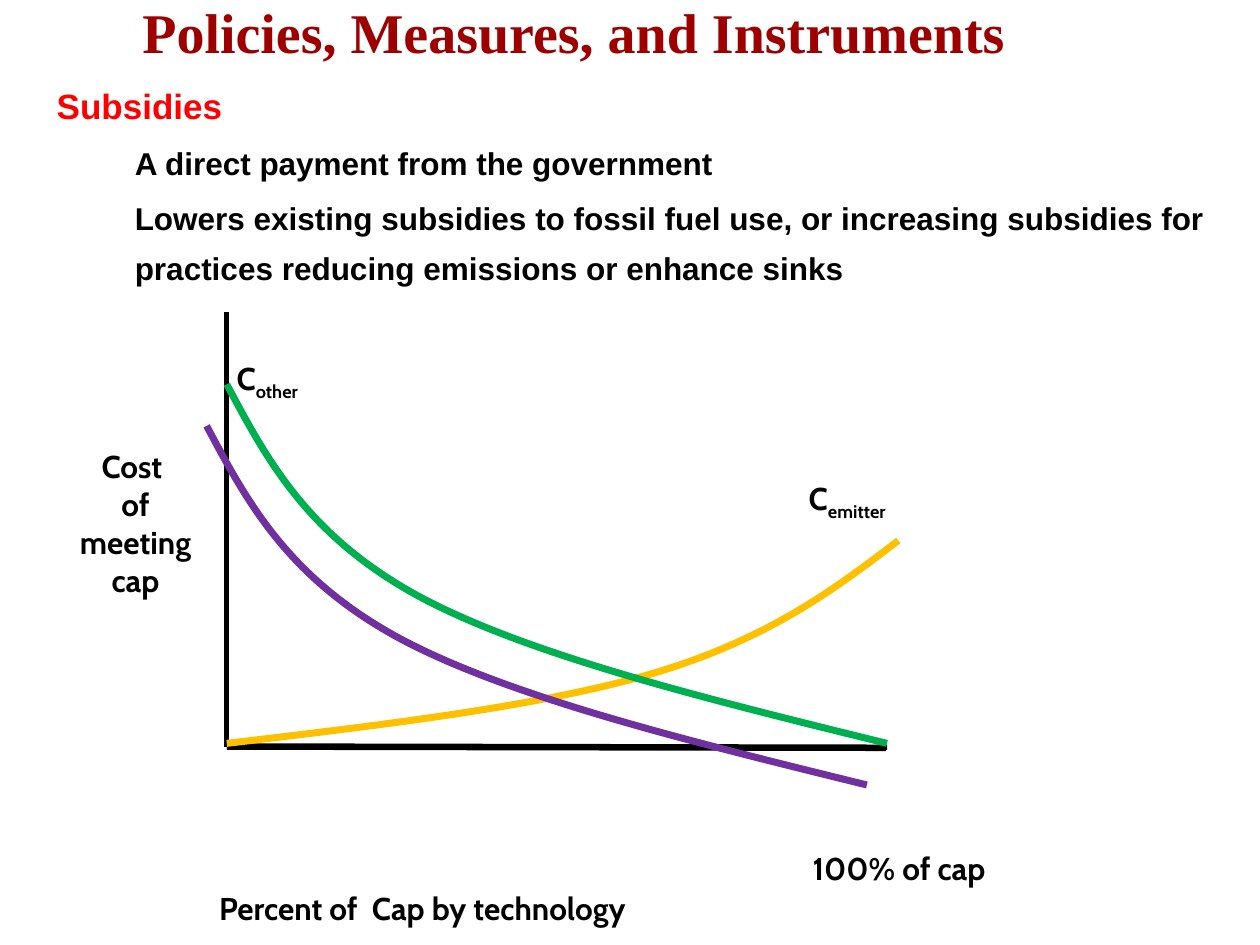
from lxml import etree
from pptx import Presentation
from pptx.dml.color import RGBColor
from pptx.enum.shapes import MSO_CONNECTOR
from pptx.enum.text import MSO_ANCHOR, MSO_AUTO_SIZE, PP_ALIGN
from pptx.oxml.ns import qn
from pptx.util import Inches, Pt

STRAIGHT = MSO_CONNECTOR.STRAIGHT
TOP = MSO_ANCHOR.TOP
FIXED = MSO_AUTO_SIZE.NONE
LEFT, MID = PP_ALIGN.LEFT, PP_ALIGN.CENTER

THEME = {
    "title": ("Times New Roman", 32, "9E0000"),
    "head": ("Arial", 20, "FF0000"),
    "item": ("Arial", 18, "000000"),
    "label": ("Cabin", 18, "000000"),
    "axis": ("000000", 3),
    "emitter": ("FFC000", 4),
    "other": ("00B050", 4),
    "subsidy": ("7030A0", 4),
}

prs = Presentation()
prs.slide_width, prs.slide_height = Inches(10), Inches(7.5)
COL, ROW = prs.slide_width / 100, prs.slide_height / 75  # square grid cells
slide = prs.slides.add_slide(prs.slide_layouts[1])
shapes = slide.shapes


def grid(*nums):
    """Turn column, row pairs into slide lengths."""
    return [round(n * (ROW if i % 2 else COL)) for i, n in enumerate(nums)]


def style(part, name):
    """Give a paragraph its font, or a line its colour and width."""
    if len(THEME[name]) == 3:
        font = part.font
        font.name, size, tint = THEME[name]
        font.size, font.bold = Pt(size), True
        font.color.rgb = RGBColor.from_string(tint)
    else:
        tint, width = THEME[name]
        part.color.rgb = RGBColor.from_string(tint)
        part.width = Pt(width)


# Title and body placeholders
title, body = shapes.title, slide.placeholders[1]
for holder, box in ((title, (10.3, -0.7, 95, 6.4)), (body, (1.6, 5.2, 95.8, 63.6))):
    holder.left, holder.top, holder.width, holder.height = grid(*box)
    frame = holder.text_frame
    frame.word_wrap, frame.auto_size, frame.vertical_anchor = True, FIXED, TOP

title.text_frame.text = "Policies, Measures, and Instruments"
para = title.text_frame.paragraphs[0]
para.alignment = LEFT
style(para, "title")

items = [
    ("Subsidies", "head", 1, 1.9),
    ("A direct payment from the government", "item", 2, 8.1),
    ("Lowers existing subsidies to fossil fuel use, or increasing subsidies for "
     "practices reducing emissions or enhance sinks", "item", 2, 8.1),
]
body.text_frame.text = "\n".join(item[0] for item in items)
for para, (_, name, level, indent) in zip(body.text_frame.paragraphs, items):
    style(para, name)
    para.level, para.line_spacing = level, 1.3
    para.space_before = Pt(THEME[name][1] * 0.2)
    props = para._p.get_or_add_pPr()
    props.set("marL", str(round(indent * COL)))
    props.set("indent", "0")
    etree.SubElement(props, qn("a:buNone"))

# Axes
for ends in ((18, 24.8, 18, 59.3), (18, 59.2, 70.4, 59.3), (18, 59.3, 70.3, 59.4)):
    axis = shapes.add_connector(STRAIGHT, *grid(*ends))
    style(axis.line, "axis")
    etree.SubElement(axis._element.spPr, qn("a:effectLst"))

# Cost curves: a start, then three points for each Bezier piece
rise = [(71.3, 42.9), (66.2, 46.8), (61.1, 50.6), (52.3, 53.3),
        (43.4, 56), (30.7, 57.5), (18, 59)]
fall = [(18, 30.5), (21.2, 36.5), (24.4, 42.5), (33.2, 47.3),
        (41.9, 52), (56.2, 55.5), (70.4, 59)]
lower = [(x - 1.6, y + 3.3) for x, y in fall]
for name, points in (("emitter", rise), ("other", fall), ("subsidy", lower)):
    start, *rest = [grid(*point) for point in points]
    pen = shapes.build_freeform(*start)
    pen.add_line_segments(rest, close=False)
    curve = pen.convert_to_shape()
    curve.shadow.inherit = False
    curve.fill.background()
    style(curve.line, name)
    steps = list(curve._element.iter(qn("a:lnTo")))
    for i in range(0, len(steps), 3):
        bend = etree.Element(qn("a:cubicBezTo"))
        steps[i].addprevious(bend)
        for step in steps[i:i + 3]:
            bend.append(step[0])
            step.getparent().remove(step)

# Labels: box, alignment, paragraphs of text and subscript
labels = [
    ((4.8, 35, 11.9, 3.8), MID, [("Cost ", ""), ("of meeting cap", "")]),
    ((63.2, 37.5, 11.1, 3.5), LEFT, [("C", "emitter")]),
    ((17.8, 28, 8.4, 3.8), LEFT, [("C", "other")]),
    ((16.4, 70.1, 50.1, 2.5), LEFT, [("Percent of  Cap by technology", "")]),
    ((61.2, 66.9, 20.3, 3.8), MID, [("100% of cap", "")]),
]
for box, align, lines in labels:
    frame = shapes.add_textbox(*grid(*box)).text_frame
    frame.word_wrap = True
    frame.text = "\n".join(text for text, _ in lines)
    for para, (_, sub) in zip(frame.paragraphs, lines):
        para.alignment = align
        style(para, "label")
        if sub:
            run = para.add_run()
            run.text = sub
            run.font._element.set("baseline", "-25000")

prs.save("out.pptx")
